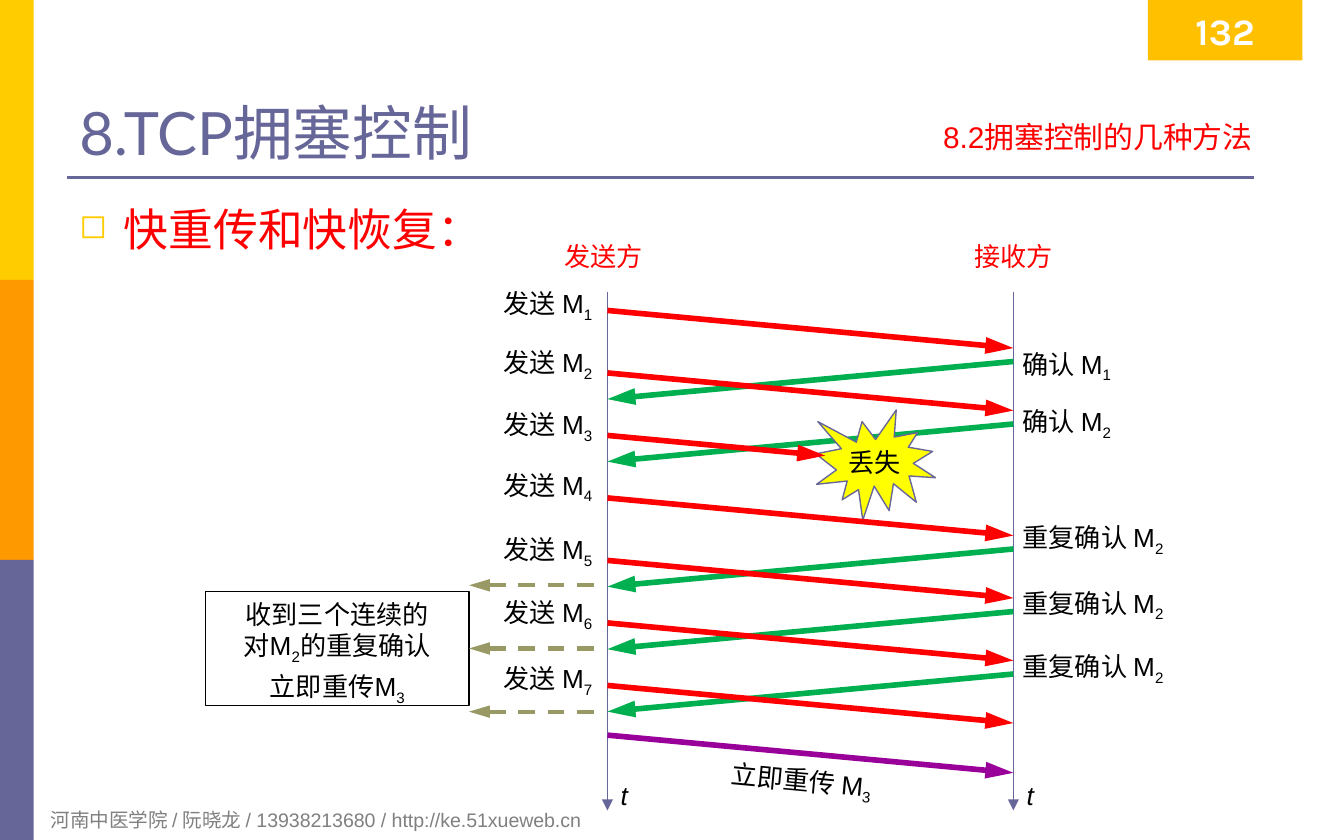
from lxml import etree
from pptx import Presentation
from pptx.dml.color import RGBColor
from pptx.enum.dml import MSO_LINE
from pptx.enum.shapes import MSO_CONNECTOR, MSO_SHAPE
from pptx.enum.text import MSO_ANCHOR, PP_ALIGN
from pptx.oxml.ns import qn
from pptx.util import Inches, Pt

STRAIGHT = MSO_CONNECTOR.STRAIGHT
RECTANGLE, BURST = MSO_SHAPE.RECTANGLE, MSO_SHAPE.EXPLOSION1
LEFT, CENTER, RIGHT = PP_ALIGN.LEFT, PP_ALIGN.CENTER, PP_ALIGN.RIGHT
TOP, MIDDLE, BOTTOM = MSO_ANCHOR.TOP, MSO_ANCHOR.MIDDLE, MSO_ANCHOR.BOTTOM
DASH = MSO_LINE.DASH

# The slide is a grid of square cells; every length below counts cells
COLUMNS, ROWS = 100, 62.5
CELL = Inches(0.1)
LABEL_HEIGHT = 3.4

COLORS = {
    "yellow": "FFCC00", "orange": "FF9900", "slate": "666699", "badge": "FFC000",
    "white": "FFFFFF", "gray": "808080", "black": "000000", "red": "FF0000",
    "green": "00B050", "purple": "990099", "olive": "999966", "burst": "FFFF00",
}


def color(name):
    return RGBColor.from_string(COLORS[name])


def cells(*values):
    return [round(value * CELL) for value in values]


def write(shape, lines, size, ink, font="Arial", align=LEFT, anchor=TOP,
          wrap=False, bold=None, italic=None, inset=(1, 0.5)):
    """Fill a shape with text; parts between underscores are subscripts."""
    frame = shape.text_frame
    frame.word_wrap = wrap
    frame.vertical_anchor = anchor
    frame.margin_left = frame.margin_right = cells(inset[0])[0]
    frame.margin_top = frame.margin_bottom = cells(inset[1])[0]
    for index, line in enumerate(lines):
        paragraph = frame.paragraphs[0] if index == 0 else frame.add_paragraph()
        paragraph.alignment = align
        for part, text in enumerate(line.split("_")):
            if not text:
                continue
            run = paragraph.add_run()
            run.text = text
            run.font.name, run.font.size = font, Pt(size)
            run.font.bold, run.font.italic = bold, italic
            run.font.color.rgb = color(ink)
            if part % 2:
                run.font._element.set("baseline", "-25000")
    return frame


def add_text(slide, box, text, size, ink, **style):
    shape = slide.shapes.add_textbox(*cells(*box))
    write(shape, [text], size, ink, **style)
    return shape


def add_block(slide, kind, box, fill=None, outline=None):
    shape = slide.shapes.add_shape(kind, *cells(*box))
    shape.shadow.inherit = False
    if fill:
        shape.fill.solid()
        shape.fill.fore_color.rgb = color(fill)
    else:
        shape.fill.background()
    if outline:
        shape.line.color.rgb = color(outline)
        shape.line.width = Pt(0.75)
    else:
        shape.line.fill.background()
    return shape


def add_line(slide, start, end, ink, width, arrow=None, length="lg", dash=None):
    line = slide.shapes.add_connector(STRAIGHT, *cells(*start, *end))
    line.line.color.rgb = color(ink)
    line.line.width = Pt(width)
    if dash:
        line.line.dash_style = dash
    if arrow:
        tip = etree.SubElement(line.line._get_or_add_ln(), qn("a:" + arrow))
        tip.set("type", "triangle")
        tip.set("len", length)
    etree.SubElement(line._element.spPr, qn("a:effectLst"))
    return line


def side_bar(slide, box):
    left, top, width, height = box
    part = height / 3
    for index, fill in enumerate(("yellow", "orange", "slate")):
        add_block(slide, RECTANGLE, (left, top + index * part, width, part), fill)


def header(slide, box):
    left, top, width, height = box
    tight = (0.9, 0.4)
    add_line(slide, (left, top + height), (left + 88.3, top + height), "slate", 1.5)
    add_text(slide, (left, top + 2.5, width, 10.4), "8.TCP拥塞控制", 32, "slate",
             font="Lato", anchor=BOTTOM, wrap=True, inset=tight)
    # Page number
    badge = add_block(slide, RECTANGLE, (left + 80.4, top, 11.5, 4.5), "badge")
    write(badge, ["132"], 20, "white", font="Karla", align=CENTER, anchor=MIDDLE,
          bold=True, inset=tight)
    # Section name
    add_text(slide, (left + 51.3, top + 8.4, 37.8, 3.9), "8.2拥塞控制的几种方法",
             16, "red", align=RIGHT, wrap=True, inset=tight)


def topic(slide, box):
    shape = slide.shapes.add_textbox(*cells(*box))
    frame = write(shape, ["快重传和快恢复："], 24, "red", wrap=True, inset=(0.9, 0.4))
    properties = frame.paragraphs[0]._p.get_or_add_pPr()
    indent = cells(3.3)[0]
    properties.set("marL", str(indent))
    properties.set("indent", str(-indent))
    bullet_color = etree.SubElement(properties, qn("a:buClr"))
    etree.SubElement(bullet_color, qn("a:srgbClr")).set("val", COLORS["yellow"])
    etree.SubElement(properties, qn("a:buSzPct")).set("val", "75000")
    etree.SubElement(properties, qn("a:buChar")).set("char", "◻")


def sequence_diagram(slide, box):
    left, top, width, height = box
    right, bottom = left + width, top + height
    step, drop = 4.65, 2.8

    # Time axes
    for x, name, name_left in ((left, "发送方", left - 4.2), (right, "接收方", right - 3.9)):
        add_text(slide, (name_left, top - 4.3, 7.9, LABEL_HEIGHT), name, 14, "red")
        add_line(slide, (x, top), (x, bottom), "slate", 0.75, "tailEnd", "med")
        add_text(slide, (x, bottom - 2.8, 2.8, LABEL_HEIGHT), "t", 14, "black", italic=True)

    # Acknowledgements: time slot, label, label offset, label width
    acknowledgements = (
        (0, "确认 M_1", 3.7, 9.2), (1, "确认 M_2", 8, 9.2),
        (3, "重复确认 M_2", 16.6, 13.5), (4, "重复确认 M_2", 21.5, 13.5),
        (5, "重复确认 M_2", 26.2, 13.5),
    )
    for slot, label, offset, label_width in acknowledgements:
        y = top + 5.2 + slot * step
        add_line(slide, (right, y), (left, y + drop), "green", 3, "tailEnd")
        add_text(slide, (right - 0.3, top + offset, label_width, LABEL_HEIGHT),
                 label, 14, "black")

    # Lost segment
    burst = add_block(slide, BURST, (left + 15.5, top + 8.8, 8.9, 8.2), "burst", "slate")
    write(burst, ["丢失"], 14, "black", align=CENTER, anchor=MIDDLE)

    # Segments sent; the third one stops at the burst
    label_offsets = (-0.8, 3.6, 8.2, 12.7, 17.5, 22.2, 27.1)
    for slot, offset in enumerate(label_offsets):
        y = top + 1.4 + slot * step
        reach = 16.2 if slot == 2 else width
        add_line(slide, (left, y), (left + reach, y + drop * reach / width),
                 "red", 3, "tailEnd")
        add_text(slide, (left - 8.7, top + offset, 9.2, LABEL_HEIGHT),
                 f"发送 M_{slot + 1}", 14, "black")

    # Retransmission
    y = top + 33
    add_line(slide, (left, y), (right, y + drop), "purple", 3, "tailEnd")
    label = add_text(slide, (left + 8.2, y + 1.7, 13.1, LABEL_HEIGHT),
                     "立即重传 M_3", 14, "black")
    label.rotation = 5.3


def retransmit_note(slide, box):
    left, top, width, height = box
    right, middle = left + width, top + height / 2
    note = add_block(slide, RECTANGLE, box, outline="black")
    frame = write(note, ["收到三个连续的", "对M_2_的重复确认", "立即重传M_3"], 14, "black",
                  align=CENTER, wrap=True)
    frame.paragraphs[2].space_before = Pt(3)
    # Dashed arrows from the duplicate acknowledgements
    for row in (-1, 0, 1):
        y = middle + row * 4.7
        arrow = add_line(slide, (right, y), (right + 10, y), "olive", 2.25,
                         "headEnd", dash=DASH)
        if row == 0:
            arrow.begin_connect(note, 3)


def footer(slide, box):
    add_text(slide, box, "河南中医学院 / 阮晓龙 / 13938213680 / http://ke.51xueweb.cn",
             10.5, "gray", wrap=True)


def main():
    presentation = Presentation()
    presentation.slide_width, presentation.slide_height = cells(COLUMNS, ROWS)
    slide = presentation.slides.add_slide(presentation.slide_layouts[6])
    side_bar(slide, (0, 0, 2.5, ROWS))
    footer(slide, (2.8, 59.6, 67.7, 2.8))
    header(slide, (5, 0, 90, 13.2))
    topic(slide, (5, 14.6, 90, 41.3))
    sequence_diagram(slide, (45.2, 21.7, 30.2, 38.6))
    retransmit_note(slide, (15.3, 44, 19.6, 8.5))
    presentation.save("out.pptx")


if __name__ == "__main__":
    main()
